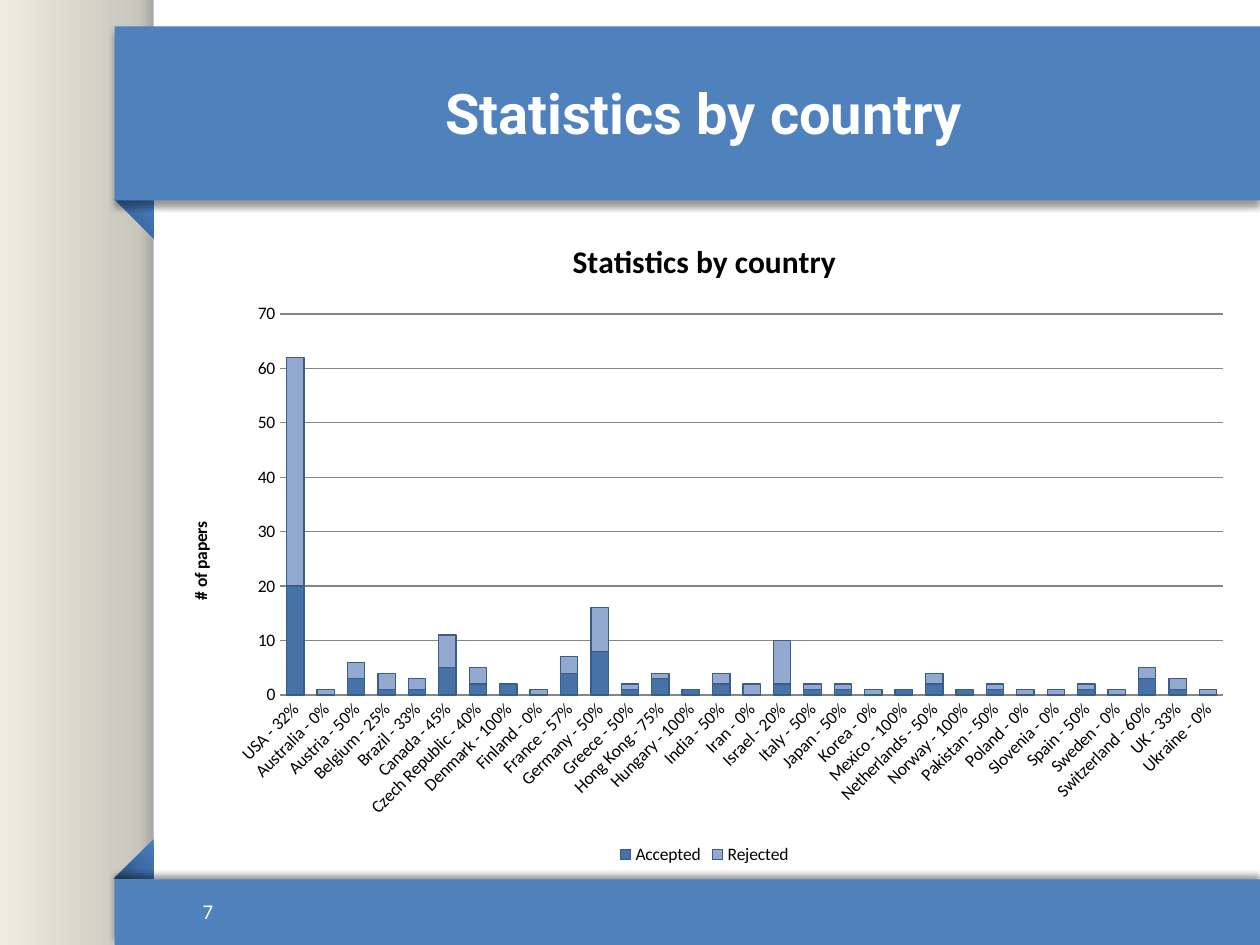
from dataclasses import dataclass

from pptx import Presentation
from pptx.chart.data import CategoryChartData
from pptx.dml.color import RGBColor
from pptx.enum.chart import XL_CHART_TYPE, XL_LEGEND_POSITION, XL_TICK_MARK
from pptx.enum.shapes import MSO_SHAPE
from pptx.enum.text import MSO_ANCHOR, PP_ALIGN
from pptx.oxml import parse_xml
from pptx.oxml.ns import nsdecls, qn
from pptx.util import Inches, Pt

RECTANGLE, TRIANGLE = MSO_SHAPE.RECTANGLE, MSO_SHAPE.RIGHT_TRIANGLE
STACKED, BOTTOM = XL_CHART_TYPE.COLUMN_STACKED, XL_LEGEND_POSITION.BOTTOM
NO_TICK = XL_TICK_MARK.NONE
MIDDLE = MSO_ANCHOR.MIDDLE
LEFT, CENTER = PP_ALIGN.LEFT, PP_ALIGN.CENTER


@dataclass(frozen=True)
class Theme:
    banner: str = "4F81BD"
    white: str = "FFFFFF"
    black: str = "000000"
    grid: str = "868686"
    bar_line: str = "385D8A"
    bars: tuple = ("4672A8", "93A9CF")
    strip: tuple = ((0, "A6A6A6"), (10, "C9C7BD"), (100, "EFEDE0"))
    fold: tuple = ((0, "2A4C75"), (50, "3C6CA6"), (100, "4780C5"))
    heading_font: str = "Roboto"
    body_font: str = "Calibri"
    heading_size: int = 32
    chart_title_size: int = 18
    number_size: int = 12
    chart_size: int = 10


# Country, acceptance rate in percent, accepted papers, rejected papers
COUNTRIES = [
    ("USA", 32, 20, 42), ("Australia", 0, 0, 1), ("Austria", 50, 3, 3),
    ("Belgium", 25, 1, 3), ("Brazil", 33, 1, 2), ("Canada", 45, 5, 6),
    ("Czech Republic", 40, 2, 3), ("Denmark", 100, 2, 0), ("Finland", 0, 0, 1),
    ("France", 57, 4, 3), ("Germany", 50, 8, 8), ("Greece", 50, 1, 1),
    ("Hong Kong", 75, 3, 1), ("Hungary", 100, 1, 0), ("India", 50, 2, 2),
    ("Iran", 0, 0, 2), ("Israel", 20, 2, 8), ("Italy", 50, 1, 1),
    ("Japan", 50, 1, 1), ("Korea", 0, 0, 1), ("Mexico", 100, 1, 0),
    ("Netherlands", 50, 2, 2), ("Norway", 100, 1, 0), ("Pakistan", 50, 1, 1),
    ("Poland", 0, 0, 1), ("Slovenia", 0, 0, 1), ("Spain", 50, 1, 1),
    ("Sweden", 0, 0, 1), ("Switzerland", 60, 3, 2), ("UK", 33, 1, 2),
    ("Ukraine", 0, 0, 1),
]

LINEAR = '<a:lin ang="10800000" scaled="0"/>'
RADIAL = '<a:path path="circle"><a:fillToRect t="100000" r="100000"/></a:path>'


class SlideBuilder:
    def __init__(self, slide, theme):
        self.slide = slide
        self.theme = theme

    def shape(self, kind, left, top, width, height):
        shape = self.slide.shapes.add_shape(
            kind, Inches(left), Inches(top), Inches(width), Inches(height))
        shape.shadow.inherit = False
        shape.line.fill.background()
        return shape

    def gradient(self, shape, stops, direction):
        shape.fill.background()
        properties = shape._element.spPr
        stop_xml = "".join(
            f'<a:gs pos="{position * 1000}"><a:srgbClr val="{color}"/></a:gs>'
            for position, color in stops)
        properties.replace(properties.find(qn("a:noFill")), parse_xml(
            f'<a:gradFill {nsdecls("a")} rotWithShape="1">'
            f"<a:gsLst>{stop_xml}</a:gsLst>{direction}</a:gradFill>"))

    def strip(self, left, top, width, height):
        strip = self.shape(RECTANGLE, left, top, width, height)
        self.gradient(strip, self.theme.strip, LINEAR)

    def fold(self, left, top, size, rotation=0):
        fold = self.shape(TRIANGLE, left, top, size, size)
        fold.rotation = rotation
        fold._element.spPr.xfrm.set("flipH", "1")
        self.gradient(fold, self.theme.fold, RADIAL)

    def banner(self, left, top, width, height, shadow_angle):
        banner = self.shape(RECTANGLE, left, top, width, height)
        banner.fill.solid()
        banner.fill.fore_color.rgb = RGBColor.from_string(self.theme.banner)
        banner._element.spPr.find(qn("a:effectLst")).append(parse_xml(
            f'<a:outerShdw {nsdecls("a")} blurRad="{Pt(4)}" dist="{Pt(3)}" '
            f'dir="{shadow_angle * 60000}" algn="t" rotWithShape="0">'
            f'<a:srgbClr val="{self.theme.black}"><a:alpha val="40000"/>'
            "</a:srgbClr></a:outerShdw>"))

    def style_font(self, font, name, size, color, bold=False):
        font.name, font.size, font.bold = name, Pt(size), bold
        font.color.rgb = RGBColor.from_string(color)

    def text(self, text, left, top, width, height, font, size,
             alignment=LEFT, bold=False):
        box = self.slide.shapes.add_textbox(
            Inches(left), Inches(top), Inches(width), Inches(height))
        frame = box.text_frame
        frame.word_wrap = True
        frame.vertical_anchor = MIDDLE
        paragraph = frame.paragraphs[0]
        paragraph.alignment = alignment
        run = paragraph.add_run()
        run.text = text
        self.style_font(run.font, font, size, self.theme.white, bold)

    def chart_heading(self, frame, text, size):
        run = frame.paragraphs[0].add_run()
        run.text = text
        self.style_font(run.font, self.theme.body_font, size,
                        self.theme.black, True)

    def chart(self, title, axis_title, rows, left, top, width, height):
        theme = self.theme
        data = CategoryChartData()
        data.categories = [f"{name} - {rate}%" for name, rate, *_ in rows]
        data.add_series("Accepted", [row[2] for row in rows])
        data.add_series("Rejected", [row[3] for row in rows])
        chart = self.slide.shapes.add_chart(
            STACKED, Inches(left), Inches(top), Inches(width), Inches(height),
            data).chart
        self.style_font(chart.font, theme.body_font, theme.chart_size, theme.black)
        chart.has_title = True
        self.chart_heading(chart.chart_title.text_frame, title,
                           theme.chart_title_size)
        chart.has_legend = True
        chart.legend.position = BOTTOM
        chart.legend.include_in_layout = False

        # Columns
        plot = chart.plots[0]
        plot.gap_width, plot.overlap, plot.vary_by_categories = 75, 100, False
        for series, color in zip(plot.series, theme.bars):
            series.format.fill.solid()
            series.format.fill.fore_color.rgb = RGBColor.from_string(color)
            series.format.line.color.rgb = RGBColor.from_string(theme.bar_line)
            series.format.line.width = Pt(0.75)

        # Axes
        grid_color = RGBColor.from_string(theme.grid)
        countries, papers = chart.category_axis, chart.value_axis
        for axis in (countries, papers):
            axis.major_tick_mark = axis.minor_tick_mark = NO_TICK
        countries.format.line.color.rgb = grid_color
        self.style_font(countries.tick_labels.font, theme.body_font,
                        theme.chart_size, theme.black)
        label_body = countries._element.find(qn("c:txPr")).find(qn("a:bodyPr"))
        label_body.set("rot", str(-45 * 60000))
        papers.minimum_scale, papers.maximum_scale, papers.major_unit = 0, 70, 10
        papers.format.line.fill.background()
        papers.major_gridlines.format.line.color.rgb = grid_color
        papers.major_gridlines.format.line.width = Pt(0.75)
        papers.has_title = True
        self.chart_heading(papers.axis_title.text_frame, axis_title,
                           theme.chart_size)


def main():
    presentation = Presentation()
    presentation.slide_width, presentation.slide_height = Inches(10), Inches(7.5)
    theme = Theme()
    slide = presentation.slides.add_slide(presentation.slide_layouts[6])
    builder = SlideBuilder(slide, theme)

    # Side strip with folded banners
    builder.strip(0, 0, 1.22, 7.5)
    builder.fold(0.91, 1.58, 0.31, rotation=270)
    builder.banner(0.91, 0.21, 9.09, 1.38, shadow_angle=90)
    builder.fold(0.91, 6.66, 0.31)
    builder.banner(0.91, 6.98, 9.09, 0.52, shadow_angle=270)

    # Title and slide number
    builder.text("Statistics by country", 1.53, 0.38, 8.11, 1.02,
                 theme.heading_font, theme.heading_size, CENTER, bold=True)
    builder.text("7", 1.51, 7.03, 2.33, 0.4, theme.body_font, theme.number_size)

    # Papers per country
    builder.chart("Statistics by country", "# of papers", COUNTRIES,
                  1.3, 1.7, 8.58, 5.2)

    presentation.save("out.pptx")


if __name__ == "__main__":
    main()
